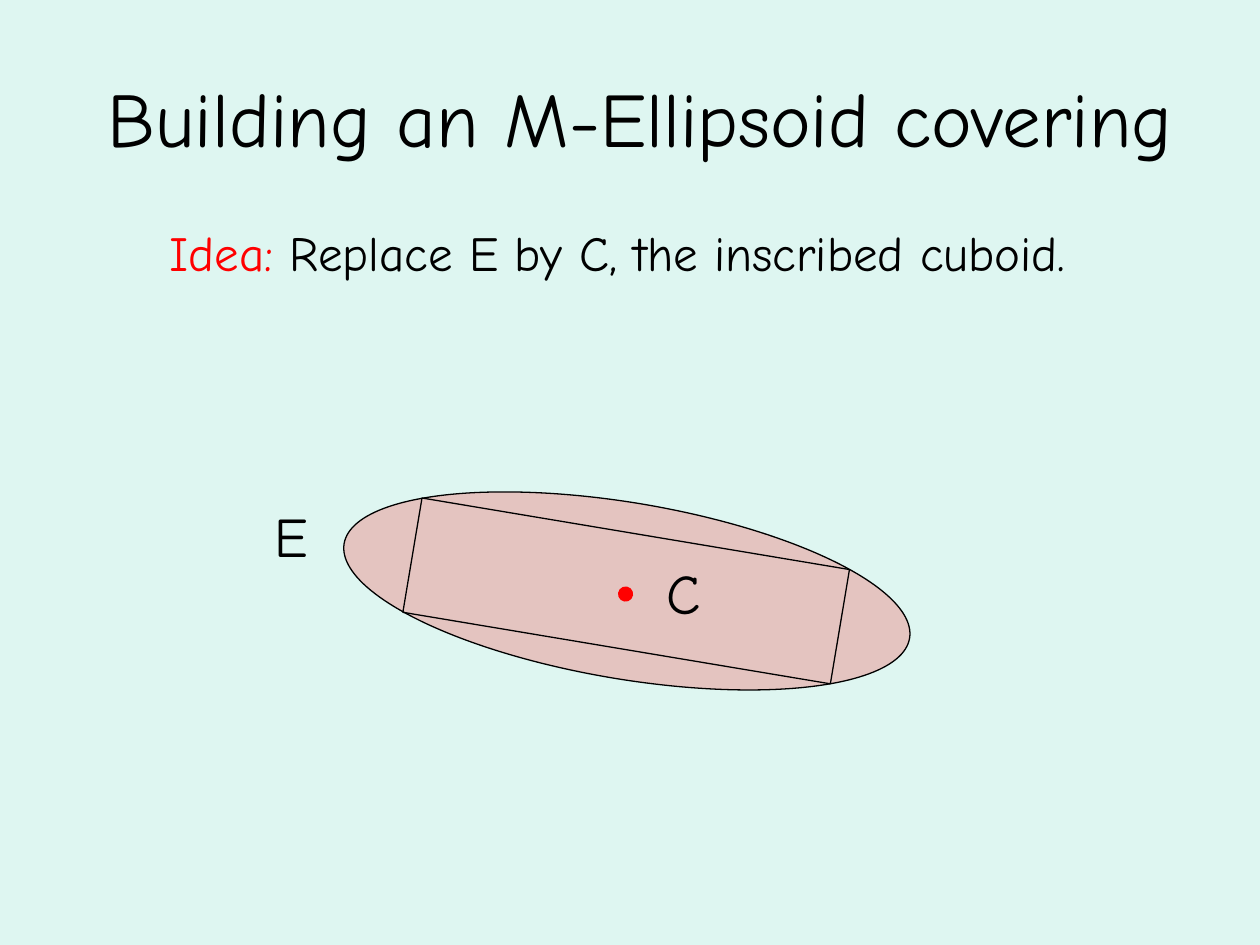
from lxml.etree import SubElement
from pptx import Presentation
from pptx.dml.color import RGBColor
from pptx.enum.shapes import MSO_SHAPE
from pptx.enum.text import MSO_ANCHOR, PP_ALIGN
from pptx.oxml.ns import qn
from pptx.util import Inches, Pt

BLACK, RED, MINT = "000000", "FF0000", "DEF6F1"
TILT = 9.5


def color(code):
    return RGBColor.from_string(code)


class Board:
    font = "Comic Neue"

    def __init__(self, slide):
        self.slide = slide
        back = slide.background.fill
        back.solid()
        back.fore_color.rgb = color(MINT)

    def text(self, box, parts, size, align=PP_ALIGN.LEFT, anchor=MSO_ANCHOR.TOP):
        """Add one line of text; parts is a list of (words, colour)."""
        frame = self.slide.shapes.add_textbox(*map(Inches, box)).text_frame
        frame.word_wrap = True
        frame.vertical_anchor = anchor
        line = frame.paragraphs[0]
        line.alignment = align
        for words, code in parts:
            run = line.add_run()
            run.text = words
            run.font.name = self.font
            run.font.size = Pt(size)
            run.font.color.rgb = color(code)

    def shape(self, kind, box, fill=None, edge=BLACK, alpha=None):
        """Add a tilted shape; alpha is the opacity in percent."""
        item = self.slide.shapes.add_shape(kind, *map(Inches, box))
        item.shadow.inherit = False
        item.rotation = TILT
        item.line.color.rgb = color(edge)
        item.line.width = Pt(0.75)
        if fill is None:
            item.fill.background()
            return
        item.fill.solid()
        item.fill.fore_color.rgb = color(fill)
        if alpha is not None:
            tint = item.fill._xPr.find(qn("a:solidFill"))[0]
            SubElement(tint, qn("a:alpha")).set("val", str(alpha * 1000))


def main():
    deck = Presentation()
    deck.slide_width, deck.slide_height = Inches(10), Inches(7.5)
    board = Board(deck.slides.add_slide(deck.slide_layouts[6]))

    board.text((-0.07, 1.72, 9.94, 0.69),
               [("Idea:", RED), (" Replace E by C, the inscribed cuboid.", BLACK)],
               28, PP_ALIGN.CENTER)
    board.text((2.08, 3.93, 0.47, 0.63), [("E", BLACK)], 32)
    board.shape(MSO_SHAPE.OVAL, (2.7, 3.99, 4.55, 1.4), RED, alpha=20)
    board.shape(MSO_SHAPE.OVAL, (4.91, 4.66, 0.11, 0.11), RED, RED)
    board.shape(MSO_SHAPE.RECTANGLE, (3.25, 4.23, 3.44, 0.92))
    board.text((5.19, 4.38, 0.47, 0.63), [("C", BLACK)], 32)
    board.text((0.5, 0.3, 9.17, 1.25),
               [("Building an M-Ellipsoid covering", BLACK)],
               44, PP_ALIGN.CENTER, MSO_ANCHOR.MIDDLE)

    deck.save("out.pptx")


if __name__ == "__main__":
    main()
